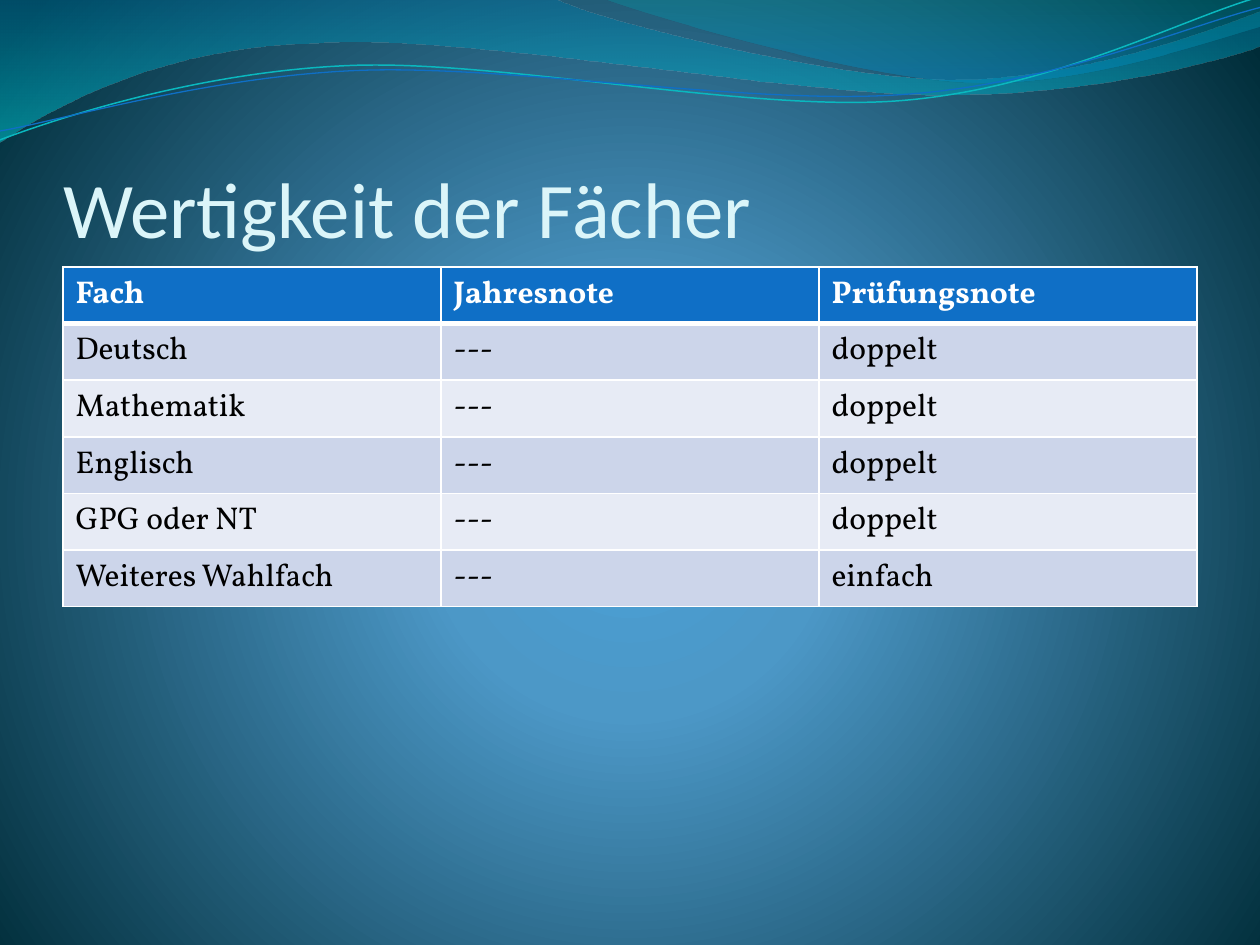
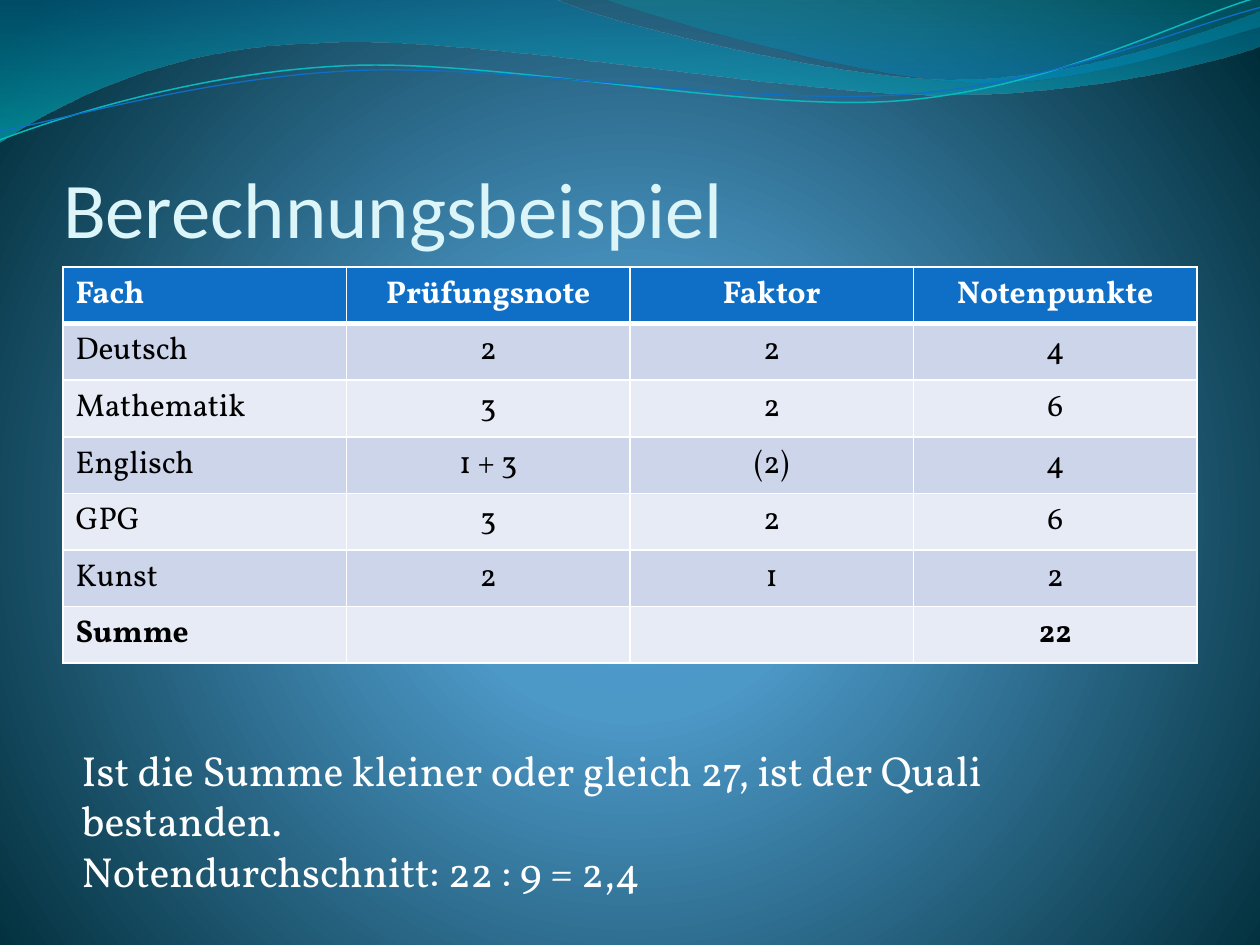
import math

import lxml.etree
import pptx
import pptx.dml.color
import pptx.enum.text
import pptx.oxml
import pptx.oxml.ns
import pptx.util

Inches = pptx.util.Inches
qn = pptx.oxml.ns.qn

TITLE_FONT = "Calibri"
BODY_FONT = "Vollkorn"
TITLE_COLOR = "DBF5F9"
HEADER_FILL = "0F6FC6"
BAND_FILLS = ("CCD5EA", "E7EBF5")
WHITE = "FFFFFF"
BLACK = "000000"
ROW_HEIGHT = pptx.util.Pt(29.2)
WAVE_TILT = 2.7

BACKGROUND_STOPS = [(0, "4AA0D6", 100), (25, "4C98C7", 100), (100, "002C38", 100)]
RADIAL = ('<a:path {} path="circle">'
          '<a:fillToRect l="10000" t="110000" r="10000" b="100000"/></a:path>')
VERTICAL = '<a:lin {} ang="5400000" scaled="0"/>'

FILLED_WAVES = [
    ([(0, 0), (4.4, -0.01), (4.76, 0.17, 6.64, 0.63, 7.58, 0.63),
      (8.53, 0.63, 9.58, 0.26, 10, 0.09), (10.01, 0.36),
      (9.83, 0.44, 8.7, 0.76, 7.46, 0.75), (6.22, 0.75, 3.82, 0.28, 2.57, 0.34),
      (1.29, 0.36, 0.46, 0.83, -0.01, 1.13), (0, 0)],
     [(0, "0074A1", 45), (100, "00C6CF", 55)]),
    ([(4.79, -0.01), (5.09, 0.11, 6.82, 0.62, 7.69, 0.65),
      (8.56, 0.69, 9.61, 0.32, 10, 0.21), (10, 0), (4.79, -0.01)],
     [(0, "00A1A9", 30), (80, "008BBF", 45)]),
]
LINE_WAVES = [
    ([(0, 1.11), (0.48, 0.93, 1.58, 0.57, 2.77, 0.52),
      (3.95, 0.47, 5.93, 0.89, 7.13, 0.8), (8.33, 0.71, 9.38, 0.15, 9.98, -0.02)],
     (4.99, 0.58), "0AB8BF", 0.85),
    ([(0, 1.04), (0.47, 0.96, 1.64, 0.61, 2.83, 0.56),
      (4.03, 0.51, 5.97, 0.84, 7.17, 0.75), (8.36, 0.67, 9.41, 0.21, 10, 0.06)],
     (5, 0.59), "0F6FC6", 0.75),
]

SUBJECT_WEIGHTS = [
    ["Fach", "Jahresnote", "Prüfungsnote"],
    ["Deutsch", "---", "doppelt"],
    ["Mathematik", "---", "doppelt"],
    ["Englisch", "---", "doppelt"],
    ["GPG oder NT", "---", "doppelt"],
    ["Weiteres Wahlfach", "---", "einfach"],
]
GRADE_EXAMPLE = [
    ["Fach", "Prüfungsnote", "Faktor", "Notenpunkte"],
    ["Deutsch", "2", "2", "4"],
    ["Mathematik", "3", "2", "6"],
    ["Englisch", "1 + 3", "(2)", "4"],
    ["GPG", "3", "2", "6"],
    ["Kunst", "2", "1", "2"],
    ["Summe", "", "", "22"],
]
RESULT_LINES = [
    "Ist die Summe kleiner oder gleich 27, ist der Quali bestanden.",
    "Notendurchschnitt: 22 : 9 = 2,4",
]


def color(hex_string):
    return pptx.dml.color.RGBColor.from_string(hex_string)


def parse(template):
    return pptx.oxml.parse_xml(template.format(pptx.oxml.ns.nsdecls("a")))


def set_gradient(fill, element, stops, direction):
    fill.gradient()
    gradient = next(element.iter(qn("a:gradFill")))
    gradient.clear()
    gradient.set("rotWithShape", "1")
    stop_list = lxml.etree.SubElement(gradient, qn("a:gsLst"))
    for position, hex_string, opacity in stops:
        stop_list.append(parse(
            f'<a:gs {{}} pos="{position * 1000}"><a:srgbClr val="{hex_string}">'
            f'<a:alpha val="{opacity * 1000}"/></a:srgbClr></a:gs>'))
    gradient.append(parse(direction))


def segment_points(segment):
    return list(zip(segment[::2], segment[1::2]))


def tilt_segment(segment, center):
    cosine = math.cos(math.radians(WAVE_TILT))
    sine = math.sin(math.radians(WAVE_TILT))
    tilted = []
    for x, y in segment_points(segment):
        across, down = x - center[0], y - center[1]
        tilted += [center[0] + across * cosine - down * sine,
                   center[1] + across * sine + down * cosine]
    return tilted


def bend_segments(shape, segments):
    lines = iter(list(shape.element.iter(qn("a:lnTo"))))
    for segment in segments:
        group = [next(lines) for point in segment_points(segment)]
        if len(group) == 3:
            curve = parse("<a:cubicBezTo {}/>")
            group[0].addprevious(curve)
            for line in group:
                curve.append(line[0])
                line.getparent().remove(line)


def add_wave(slide, outline, closed):
    points = [(Inches(x), Inches(y))
              for segment in outline for x, y in segment_points(segment)]
    builder = slide.shapes.build_freeform(*points[0])
    builder.add_line_segments(points[1:], close=closed)
    shape = builder.convert_to_shape()
    bend_segments(shape, outline[1:])
    shape.shadow.inherit = False
    return shape


def add_waves_to_master(master, slide):
    waves = []
    for outline, stops in FILLED_WAVES:
        shape = add_wave(slide, outline, True)
        set_gradient(shape.fill, shape.element.spPr, stops, VERTICAL)
        shape.line.fill.background()
        waves.append(shape)
    for outline, center, hex_string, width in LINE_WAVES:
        tilted = [tilt_segment(segment, center) for segment in outline]
        shape = add_wave(slide, tilted, False)
        shape.rotation = 360 - WAVE_TILT
        shape.fill.background()
        shape.line.color.rgb = color(hex_string)
        shape.line.width = pptx.util.Pt(width)
        waves.append(shape)
    for index, shape in enumerate(waves):
        shape.element.nvSpPr.cNvPr.id = 20 + index
        master.shapes.element.insert(2 + index, shape.element)


def format_runs(paragraph, font, size, hex_string, bold=False):
    for run in paragraph.runs:
        run.font.name = font
        run.font.size = pptx.util.Pt(size)
        run.font.color.rgb = color(hex_string)
        run.font.bold = bold


def set_title(slide, text):
    title = slide.shapes.title
    title.left, title.top = Inches(0.5), Inches(0.77)
    title.width, title.height = Inches(9), Inches(1.25)
    frame = title.text_frame
    frame.text = text
    frame.word_wrap = True
    frame.auto_size = pptx.enum.text.MSO_AUTO_SIZE.NONE
    frame.vertical_anchor = pptx.enum.text.MSO_ANCHOR.BOTTOM
    frame.margin_left = frame.margin_right = frame.margin_bottom = 0
    frame.margin_top = Inches(0.05)
    paragraph = frame.paragraphs[0]
    paragraph.alignment = pptx.enum.text.PP_ALIGN.LEFT
    paragraph.line_spacing = 2.0
    format_runs(paragraph, TITLE_FONT, 45, TITLE_COLOR)


def set_borders(cell, top, bottom):
    properties = cell._tc.get_or_add_tcPr()
    for index, (side, width) in enumerate((("L", 1), ("R", 1), ("T", top), ("B", bottom))):
        properties.insert(index, parse(
            f'<a:ln{side} {{}} w="{pptx.util.Pt(width)}"><a:solidFill>'
            f'<a:srgbClr val="{WHITE}"/></a:solidFill></a:ln{side}>'))


def add_grade_table(slide, rows, centred=False):
    column_count = len(rows[0])
    table = slide.shapes.add_table(
        len(rows), column_count, Inches(0.5), Inches(2.12),
        Inches(9), ROW_HEIGHT * len(rows)).table
    for column in table.columns:
        column.width = Inches(9 / column_count)
    for row_index, values in enumerate(rows):
        header = row_index == 0
        bold = header or values[0] == "Summe"
        for column_index, value in enumerate(values):
            cell = table.cell(row_index, column_index)
            cell.text_frame.text = value
            cell.fill.solid()
            cell.fill.fore_color.rgb = color(
                HEADER_FILL if header else BAND_FILLS[(row_index - 1) % 2])
            set_borders(cell, 3 if row_index == 1 else 1, 3 if header else 1)
            paragraph = cell.text_frame.paragraphs[0]
            if centred and column_index:
                paragraph.alignment = pptx.enum.text.PP_ALIGN.CENTER
            format_runs(paragraph, BODY_FONT, 18, WHITE if header else BLACK, bold)


def add_result_text(slide, lines):
    box = slide.shapes.add_textbox(Inches(0.55), Inches(5.86), Inches(8.98), Inches(0.91))
    frame = box.text_frame
    frame.word_wrap = True
    frame.auto_size = pptx.enum.text.MSO_AUTO_SIZE.SHAPE_TO_FIT_TEXT
    frame.text = "\n".join(lines)
    for paragraph in frame.paragraphs:
        format_runs(paragraph, BODY_FONT, 24, WHITE)


def main():
    presentation = pptx.Presentation()
    presentation.slide_width, presentation.slide_height = Inches(10), Inches(7.5)
    master = presentation.slide_master
    set_gradient(master.background.fill, master.element, BACKGROUND_STOPS, RADIAL)
    layout = presentation.slide_layouts.get_by_name("Title Only")

    weights_slide = presentation.slides.add_slide(layout)
    add_waves_to_master(master, weights_slide)
    set_title(weights_slide, "Wertigkeit der Fächer")
    add_grade_table(weights_slide, SUBJECT_WEIGHTS)

    example_slide = presentation.slides.add_slide(layout)
    set_title(example_slide, "Berechnungsbeispiel")
    add_grade_table(example_slide, GRADE_EXAMPLE, centred=True)
    add_result_text(example_slide, RESULT_LINES)

    presentation.save("out.pptx")


if __name__ == "__main__":
    main()
